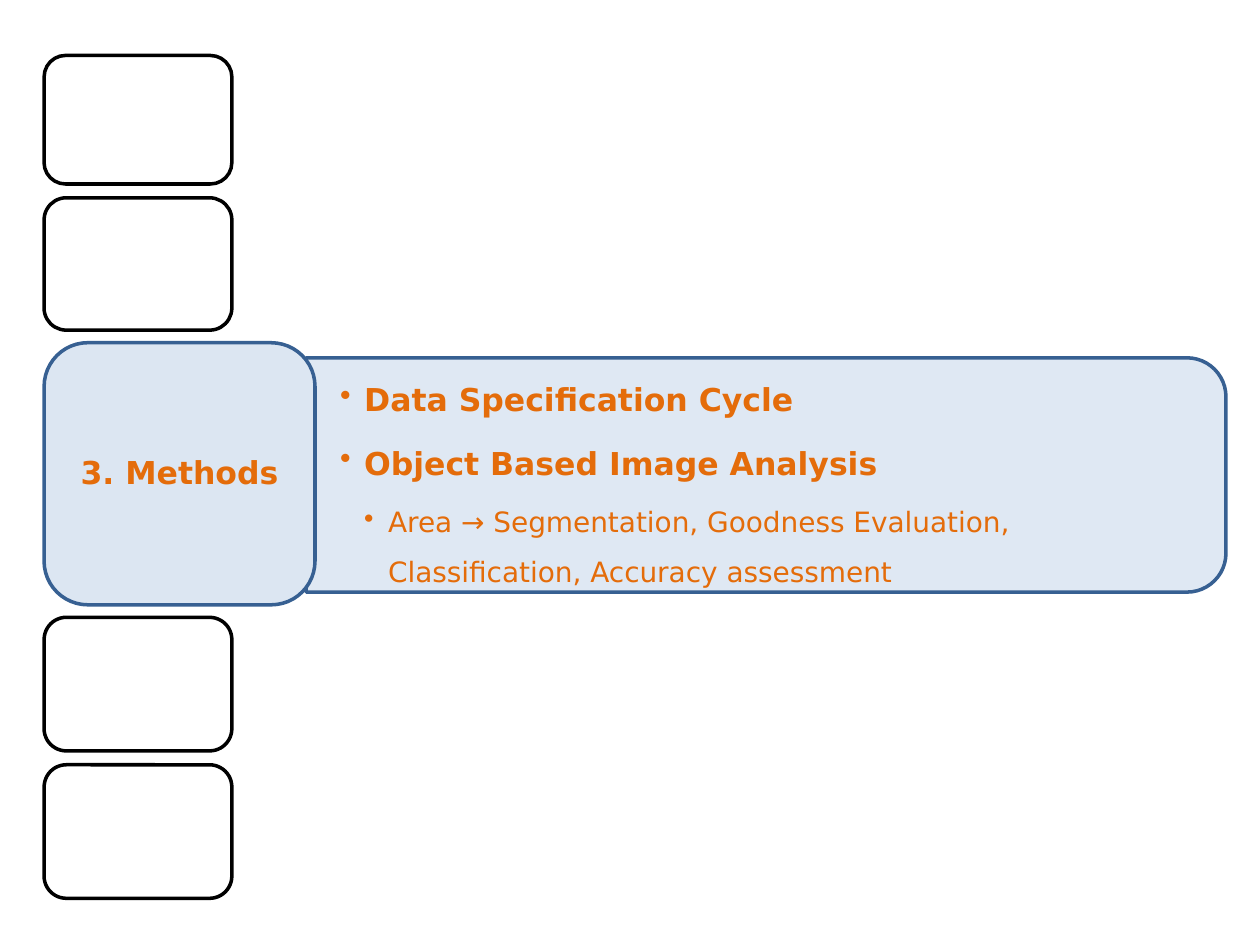
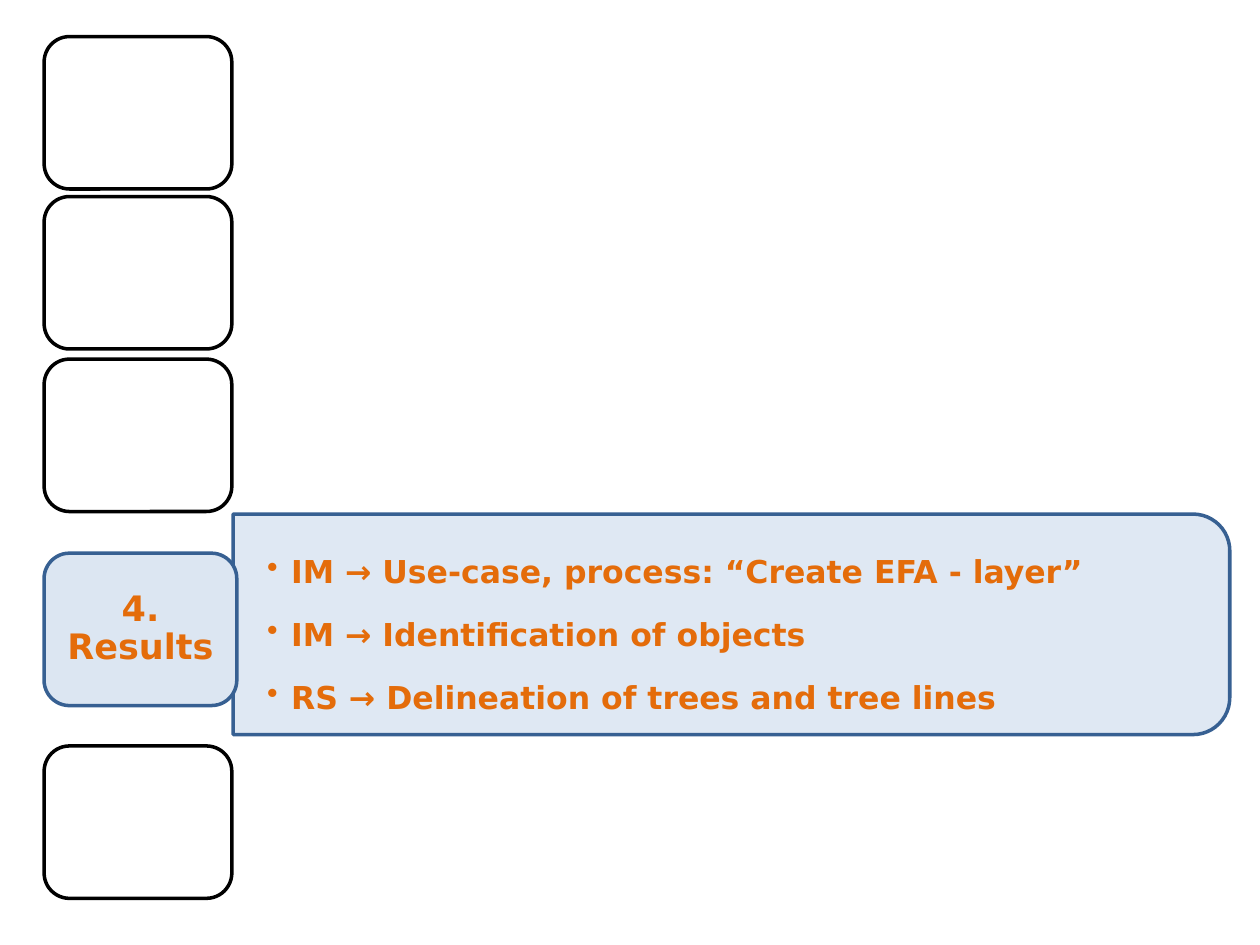
import pptx
import pptx.util
import pptx.dml.color
import pptx.enum.shapes
import pptx.enum.text
import pptx.oxml
import pptx.oxml.ns

Inches = pptx.util.Inches
Pt = pptx.util.Pt
Shape = pptx.enum.shapes.MSO_SHAPE
Align = pptx.enum.text.PP_ALIGN

COLORS = {
    "white": "FFFFFF",
    "black": "000000",
    "pale": "DCE6F2",
    "blue": "376092",
    "orange": "E46C0A",
}
FONT = "DejaVu Sans"
LEFT = 0.35      # left edge of the section tabs
WIDTH = 1.49     # width of a closed tab
INDENT = 0.19    # one bullet level


def color(name):
    return pptx.dml.color.RGBColor.from_string(COLORS[name])


def add_box(slide, kind, box, fill, line):
    """Add a filled, outlined preset shape without shadow."""
    shape = slide.shapes.add_shape(kind, *map(Inches, box))
    shape.shadow.inherit = False
    shape.fill.solid()
    shape.fill.fore_color.rgb = color(fill)
    shape.line.color.rgb = color(line)
    shape.line.width = Pt(2)
    return shape


def add_text(slide, box, pad):
    """Add a wrapping, vertically centred text frame."""
    frame = slide.shapes.add_textbox(*map(Inches, box)).text_frame
    frame.word_wrap = True
    frame.vertical_anchor = pptx.enum.text.MSO_ANCHOR.MIDDLE
    frame.margin_left = frame.margin_right = Inches(pad[0])
    frame.margin_top = frame.margin_bottom = Inches(pad[1])
    return frame


def style(para, size, bold, lead, after):
    para.line_spacing = lead
    para.space_after = Pt(after)
    for run in para.runs:
        run.font.name = FONT
        run.font.size = Pt(size)
        run.font.bold = bold
        run.font.color.rgb = color("orange")


def add_bullet(para, level):
    para.level = level
    props = para._p.get_or_add_pPr()
    props.set("marL", str(Inches(INDENT * (level + 1))))
    props.set("indent", str(Inches(-INDENT)))
    mark = pptx.oxml.ns.nsdecls("a")
    props.append(pptx.oxml.parse_xml(f'<a:buChar {mark} char="•"/>'))


def add_tab(slide, top, height):
    """Add the empty tab of a closed section."""
    add_box(slide, Shape.ROUNDED_RECTANGLE, (LEFT, top, WIDTH, height),
            "white", "black")


def add_panel(slide, box):
    """Add a panel rounded on its right side: a turned top-rounded shape."""
    left, top, width, height = box
    shift = (width - height) / 2
    turned = (left + shift, top - shift, height, width)
    panel = add_box(slide, Shape.ROUND_2_SAME_RECTANGLE, turned,
                    "pale", "blue")
    panel.rotation = 90
    fill = panel.fill._xPr.find(".//" + pptx.oxml.ns.qn("a:srgbClr"))
    mark = pptx.oxml.ns.nsdecls("a")
    fill.append(pptx.oxml.parse_xml(f'<a:alpha {mark} val="90000"/>'))


def add_points(slide, box, points):
    """Write the bulleted (level, text) points of the open section."""
    left, top, width, height = box
    area = (left, top + 0.09, width - 0.09, height - 0.18)
    frame = add_text(slide, area, (0.27, 0.14))
    for i, (level, text) in enumerate(points):
        para = frame.paragraphs[0] if i == 0 else frame.add_paragraph()
        para.text = text
        add_bullet(para, level)
        style(para, 18 - 2 * level, level == 0, 1.5, 3.7)


def add_label(slide, box, text, size):
    """Add the highlighted tab that names the open section."""
    add_box(slide, Shape.ROUNDED_RECTANGLE, box, "pale", "blue")
    left, top, width, height = box
    edge = 0.05 * min(width, height)
    area = (left + edge, top + edge, width - 2 * edge, height - 2 * edge)
    frame = add_text(slide, area, (0.08, 0.04))
    frame.text = text
    para = frame.paragraphs[0]
    para.alignment = Align.CENTER
    style(para, size, True, 0.9, 7)


def add_section(deck, tabs, panel, points, label, text, size):
    slide = deck.slides.add_slide(deck.slide_layouts[6])
    for top, height in tabs:
        add_tab(slide, top, height)
    add_panel(slide, panel)
    add_points(slide, panel, points)
    add_label(slide, label, text, size)


def main():
    deck = pptx.Presentation()
    deck.slide_width = Inches(10)
    deck.slide_height = Inches(7.5)

    # Methods
    add_section(
        deck,
        tabs=[(0.44, 1.02), (1.57, 1.05), (4.9, 1.06), (6.07, 1.06)],
        panel=(2.43, 2.84, 7.3, 1.86),
        points=[
            (0, "Data Specification Cycle"),
            (0, "Object Based Image Analysis"),
            (1, "Area → Segmentation, Goodness Evaluation, "
                "Classification, Accuracy assessment"),
        ],
        label=(LEFT, 2.72, 2.15, 2.08), text="3. Methods", size=18)

    # Results
    add_section(
        deck,
        tabs=[(top, 1.21) for top in (0.29, 1.56, 2.85, 5.92)],
        panel=(1.85, 4.08, 7.91, 1.75),
        points=[
            (0, "IM → Use-case, process: “Create EFA - layer”"),
            (0, "IM → Identification of objects"),
            (0, "RS → Delineation of trees and tree lines"),
        ],
        label=(LEFT, 4.39, 1.53, 1.21), text="4. Results", size=20)

    deck.save("out.pptx")


if __name__ == "__main__":
    main()
